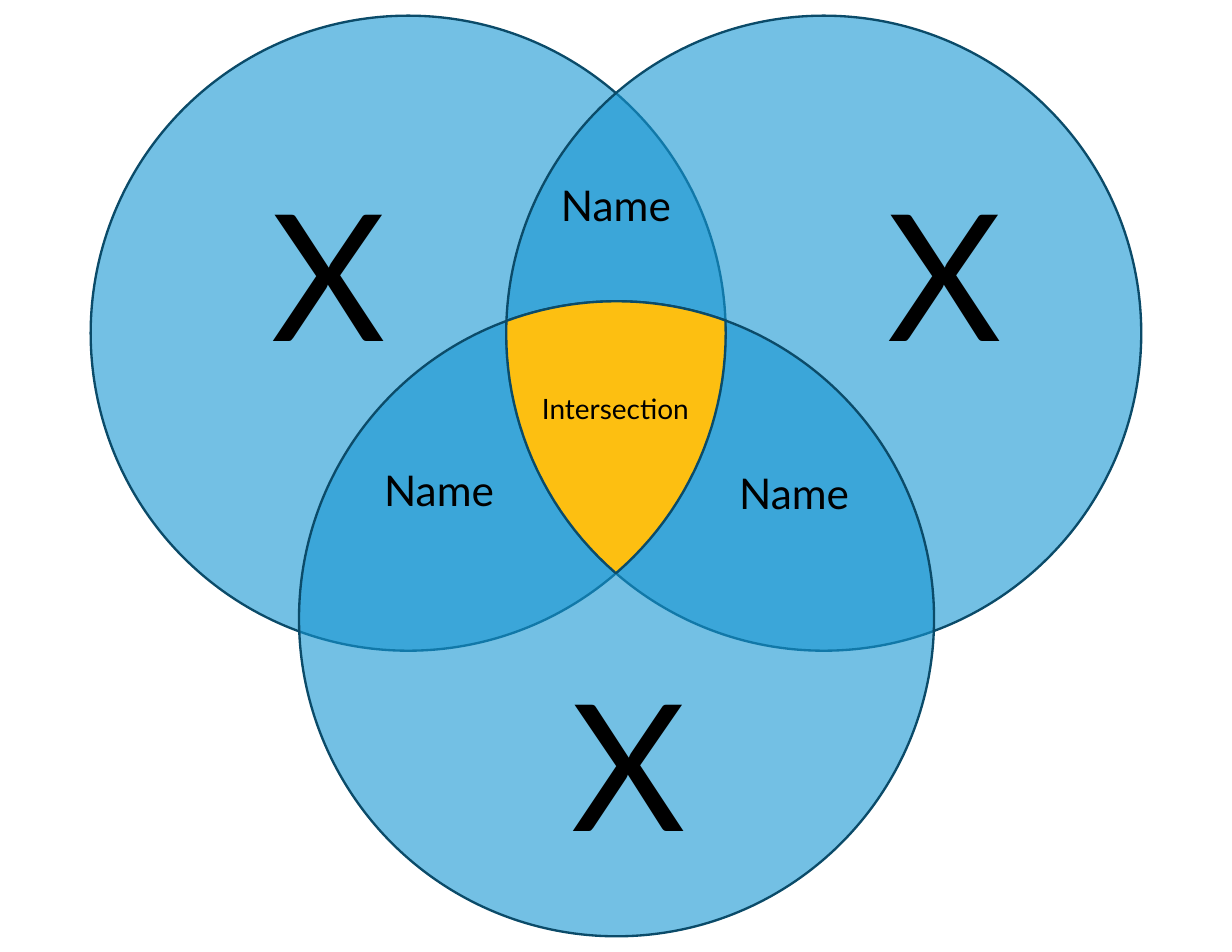
import math

from lxml import etree
from pptx import Presentation
from pptx import util as u
from pptx.dml import color
from pptx.enum import shapes, text
from pptx.oxml import ns

COLORS = {"circle": "1696D2", "outline": "0B4B69", "center": "FDBF11", "ink": "000000"}
DIAMETER = 5.67
CIRCLES = {"left": (0, 0), "right": (3.71, 0), "bottom": (1.86, 2.55)}
LABELS = [
    ("X", 113.3, (1.52, 1.29, 1.01, 2.01)),
    ("X", 113.3, (4.19, 5.66, 1.01, 2.01)),
    ("X", 113.3, (7.02, 1.29, 1.01, 2.01)),
    ("Name", 27.2, (3.61, 1.41, 2.16, 0.56)),
    ("Name", 27.2, (2.03, 3.96, 2.16, 0.56)),
    ("Name", 27.2, (5.34, 3.98, 1.88, 0.56)),
    ("Intersection", 18, (3.45, 3.31, 2.47, 0.4)),
]
ARCS = [("bottom", 249.8, 290.2), ("left", -2.1, 49), ("right", 131, 182.1)]


def rgb(name):
    """Return the named colour."""
    return color.RGBColor.from_string(COLORS[name])


def paint(shape, fill, opacity=100):
    """Give a shape its fill, opacity and outline."""
    shape.shadow.inherit = False
    shape.fill.solid()
    shape.fill.fore_color.rgb = rgb(fill)
    shape.line.color.rgb = rgb("outline")
    shape.line.width = u.Pt(1.5)
    if opacity < 100:
        tint = shape.fill._xPr.find(ns.qn("a:solidFill"))[0]
        etree.SubElement(tint, ns.qn("a:alpha"), val=str(opacity * 1000))


def add_circles(page, left, top):
    """Draw the three overlapping circles."""
    for across, down in CIRCLES.values():
        place = [u.Inches(n) for n in (left + across, top + down, DIAMETER, DIAMETER)]
        circle = page.shapes.add_shape(shapes.MSO_SHAPE.OVAL, *place)
        paint(circle, "circle", opacity=60)


def add_center(page, left, top, steps=24):
    """Draw the region shared by all three circles from their arcs."""
    radius = DIAMETER / 2
    points = []
    for name, start, end in ARCS:
        across, down = CIRCLES[name]
        for step in range(steps + 1):
            angle = math.radians(start + (end - start) * step / steps)
            points.append((
                u.Inches(left + across + radius * (1 + math.cos(angle))),
                u.Inches(top + down + radius * (1 + math.sin(angle))),
            ))
    builder = page.shapes.build_freeform(*points[0])
    builder.add_line_segments(points[1:], close=True)
    paint(builder.convert_to_shape(), "center")


def add_label(page, words, size, left, top, width, height):
    """Write one centred label."""
    box = page.shapes.add_textbox(*[u.Inches(n) for n in (left, top, width, height)])
    frame_format = {"word_wrap": True, "auto_size": text.MSO_AUTO_SIZE.SHAPE_TO_FIT_TEXT}
    for key, value in frame_format.items():
        setattr(box.text_frame, key, value)
    para = box.text_frame.paragraphs[0]
    para.alignment = text.PP_ALIGN.CENTER
    span = para.add_run()
    span.text = words
    for key, value in {"name": "Lato", "size": u.Pt(size)}.items():
        setattr(span.font, key, value)
    span.font.color.rgb = rgb("ink")


def add_venn(page, left, top):
    """Place the whole diagram with its top left corner at the given point."""
    add_circles(page, left, top)
    add_center(page, left, top)
    for words, size, (across, down, width, height) in LABELS:
        add_label(page, words, size, left + across, top + down, width, height)


def main():
    """Build and save the deck."""
    deck = Presentation()
    deck.slide_width, deck.slide_height = u.Inches(11), u.Inches(8.5)
    page = deck.slides.add_slide(deck.slide_layouts[6])
    add_venn(page, 0.81, 0.14)
    deck.save("out.pptx")


if __name__ == "__main__":
    main()
